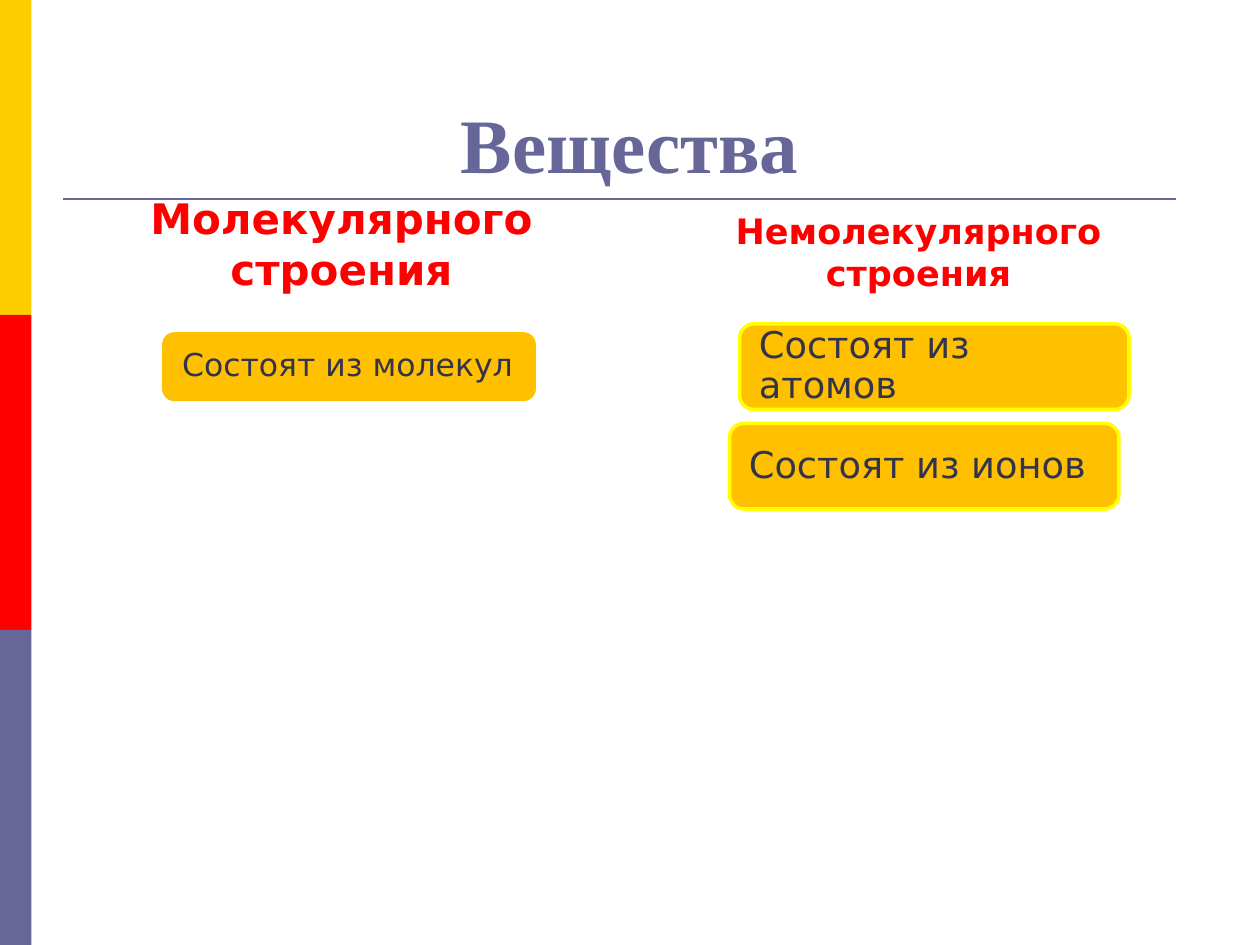
from lxml.etree import SubElement
from pptx import Presentation
from pptx.dml.color import RGBColor
from pptx.enum.shapes import MSO_CONNECTOR, MSO_SHAPE
from pptx.enum.text import MSO_ANCHOR, PP_ALIGN
from pptx.oxml.ns import qn
from pptx.util import Inches, Pt

YELLOW = RGBColor(0xFF, 0xCC, 0x00)
RED = RGBColor(0xFF, 0x00, 0x00)
VIOLET = RGBColor(0x66, 0x66, 0x99)
AMBER = RGBColor(0xFF, 0xC0, 0x00)
BRIGHT_YELLOW = RGBColor(0xFF, 0xFF, 0x00)
DARK = RGBColor(0x33, 0x33, 0x4C)
SANS = "DejaVu Sans"
SERIF = "Times New Roman"


def place(shape, left, top, width, height):
    shape.left, shape.top = Inches(left), Inches(top)
    shape.width, shape.height = Inches(width), Inches(height)


def write(shape, text, size, color, face=SANS, bold=False,
          align=PP_ALIGN.CENTER, anchor=MSO_ANCHOR.BOTTOM):
    frame = shape.text_frame
    frame.text = text
    frame.word_wrap = True
    frame.vertical_anchor = anchor
    paragraph = frame.paragraphs[0]
    paragraph.alignment = align
    font = paragraph.font
    font.name, font.size, font.bold = face, Pt(size), bold
    font.color.rgb = color
    return frame


def add_side_bands(slide, left, top, width, height):
    colors = (YELLOW, RED, VIOLET)
    band_height = height / len(colors)
    for index, color in enumerate(colors):
        band = slide.shapes.add_shape(
            MSO_SHAPE.RECTANGLE, Inches(left), Inches(top + index * band_height),
            Inches(width), Inches(band_height))
        band.shadow.inherit = False
        band.fill.solid()
        band.fill.fore_color.rgb = color
        band.line.fill.background()


def add_heading(slide, left, top, width, height):
    rule_y = Inches(top + height + 0.03)
    rule = slide.shapes.add_connector(
        MSO_CONNECTOR.STRAIGHT, Inches(left), rule_y, Inches(9.33), rule_y)
    rule.line.color.rgb = VIOLET
    rule.line.width = Pt(1.5)
    SubElement(rule._element.spPr, qn("a:effectLst"))
    place(slide.shapes.title, left, top, width, height)
    write(slide.shapes.title, "Вещества", 44, VIOLET, SERIF, bold=True)


def add_column_header(slide, text, size, left, top, width, height):
    header = slide.shapes.add_textbox(
        Inches(left), Inches(top), Inches(width), Inches(height))
    write(header, text, size, RED, bold=True)


def add_card(slide, text, size, outline, left, top, width, height):
    card = slide.shapes.add_shape(
        MSO_SHAPE.ROUNDED_RECTANGLE, Inches(left), Inches(top),
        Inches(width), Inches(height))
    card.shadow.inherit = False
    card.fill.solid()
    card.fill.fore_color.rgb = AMBER
    card.line.color.rgb = outline
    card.line.width = Pt(2)
    frame = write(card, text, size, DARK, align=PP_ALIGN.LEFT,
                  anchor=MSO_ANCHOR.MIDDLE)
    frame.margin_left = frame.margin_right = Inches(0.12)
    frame.margin_top = frame.margin_bottom = 0
    frame.paragraphs[0].line_spacing = 0.9


def main():
    presentation = Presentation()
    presentation.slide_width, presentation.slide_height = Inches(10), Inches(7.5)
    slide = presentation.slides.add_slide(presentation.slide_layouts[5])

    add_side_bands(slide, 0, 0, 0.25, 7.5)
    add_heading(slide, 0.5, 0.3, 9, 1.25)

    add_column_header(slide, "Молекулярного строения", 24, 0.5, 1.68, 4.42, 0.7)
    add_card(slide, "Состоят из молекул", 18, AMBER, 1.3, 2.65, 2.94, 0.52)

    add_column_header(slide, "Немолекулярного строения", 20, 5.08, 1.68, 4.42, 0.7)
    add_card(slide, "Состоят из атомов", 21, BRIGHT_YELLOW, 5.87, 2.57, 3.09, 0.68)
    add_card(slide, "Состоят из ионов", 21, BRIGHT_YELLOW, 5.79, 3.36, 3.09, 0.68)

    presentation.save("out.pptx")


if __name__ == "__main__":
    main()
